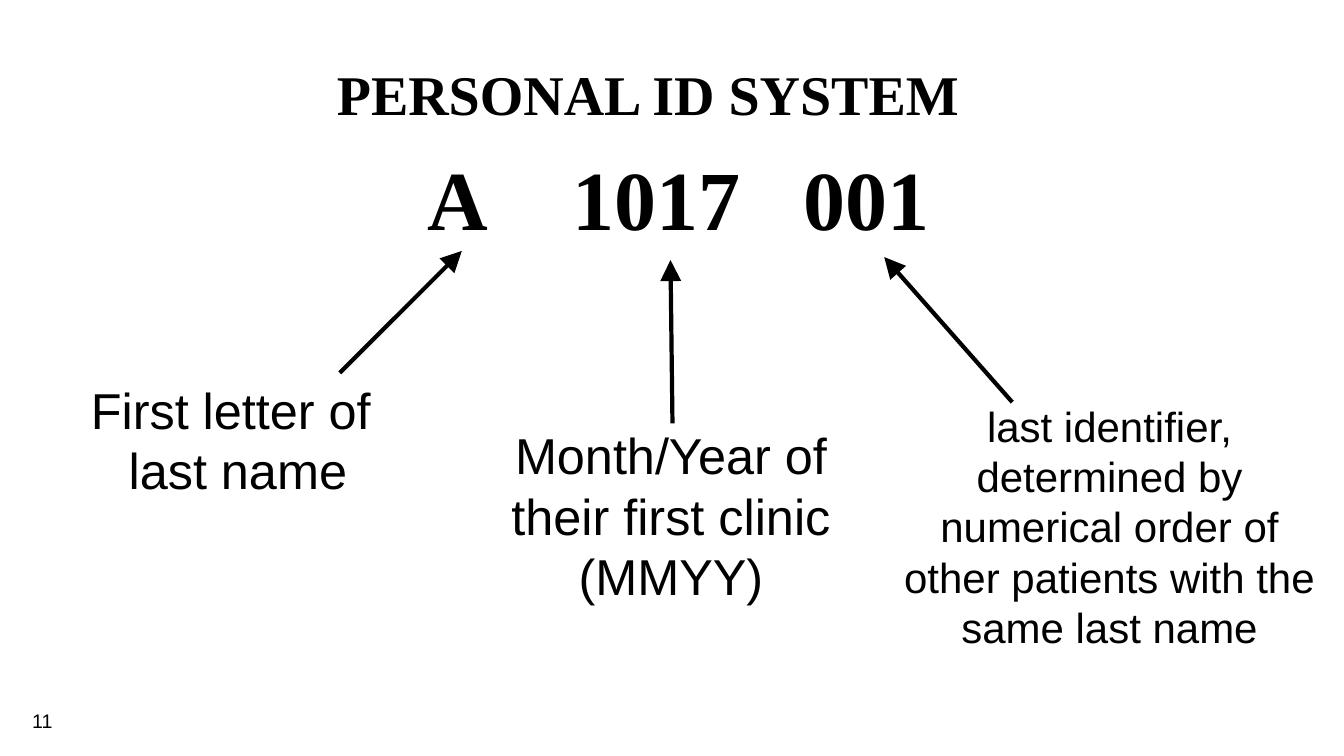
import pptx
import pptx.util
import pptx.dml.color
import pptx.enum.text
import pptx.enum.shapes
import pptx.oxml.ns
import lxml.etree
from dataclasses import dataclass

Inches = pptx.util.Inches
Pt = pptx.util.Pt
Align = pptx.enum.text.PP_ALIGN
Anchor = pptx.enum.text.MSO_ANCHOR
qn = pptx.oxml.ns.qn


@dataclass
class Theme:
    """Colours, fonts and type sizes of the slide."""
    ink: str = "000000"
    serif: str = "Times New Roman"
    sans: str = "Arial"
    title: int = 40
    code: int = 60
    label: int = 36
    small: int = 30
    page: int = 14
    line: int = 3
    lead: float = 1.2


THEME = Theme()


def ink():
    """Return the text and line colour."""
    return pptx.dml.color.RGBColor.from_string(THEME.ink)


def place(shape, box):
    """Move a shape to a box of left, top, width and height."""
    shape.left, shape.top, shape.width, shape.height = map(Inches, box)


def style(shape, size, face, bold=False, align=Align.CENTER, inset=0.1):
    """Format the frame, paragraphs and runs of a shape."""
    frame = shape.text_frame
    frame.word_wrap = True
    frame.auto_size = pptx.enum.text.MSO_AUTO_SIZE.NONE
    frame.margin_left = frame.margin_right = Inches(0.1)
    frame.margin_top = frame.margin_bottom = Inches(inset)
    for para in frame.paragraphs:
        para.alignment = align
        para.space_before = Pt(0)
        para.line_spacing = Pt(size * THEME.lead)
        for run in para.runs:
            font = run.font
            font.size, font.name, font.bold = Pt(size), face, bold
            font.color.rgb = ink()


def title(slide, box, text):
    """Fill the title placeholder."""
    shape = slide.shapes.title
    place(shape, box)
    shape.text_frame.text = text
    shape.text_frame.vertical_anchor = Anchor.MIDDLE
    style(shape, THEME.title, THEME.serif, bold=True)


def code(slide, box, parts):
    """Set the parts of the code, each with its extra gap in points."""
    shape = slide.placeholders[1]
    place(shape, box)
    frame = shape.text_frame
    frame.vertical_anchor = Anchor.TOP
    para = frame.paragraphs[0]
    props = para._p.get_or_add_pPr()
    props.set("marL", str(int(Inches(0.14))))
    props.set("indent", "0")
    lxml.etree.SubElement(props, qn("a:buNone"))
    for text, gap in parts:
        if gap:
            space = para.add_run()
            space.text = " "
            space.font._element.set("spc", str(gap * 100))
        para.add_run().text = text
    style(shape, THEME.code, THEME.serif, bold=True)


def label(slide, box, text, size, **kind):
    """Add a text box."""
    shape = slide.shapes.add_textbox(*map(Inches, box))
    shape.text_frame.text = text
    style(shape, size, THEME.sans, **kind)


def arrow(slide, start, end):
    """Draw an arrow from start to end."""
    link = slide.shapes.add_connector(
        pptx.enum.shapes.MSO_CONNECTOR.STRAIGHT, *map(Inches, start + end))
    link.line.color.rgb = ink()
    link.line.width = Pt(THEME.line)
    lxml.etree.SubElement(link.line._get_or_add_ln(), qn("a:tailEnd"),
                          type="triangle", w="lg", len="lg")
    lxml.etree.SubElement(link._element.spPr, qn("a:effectLst"))


def main():
    """Build the slide and save it."""
    deck = pptx.Presentation()
    deck.slide_width, deck.slide_height = Inches(13.33), Inches(7.5)
    slide = deck.slides.add_slide(deck.slide_layouts[1])
    title(slide, (0.33, 0.3, 12.33, 1.25), "PERSONAL ID SYSTEM ")
    code(slide, (0.22, 1.35, 12.88, 4.95),
         [("A", 0), ("1017", 45), ("001", 30)])
    label(slide, (0.22, 6.98, 0.78, 0.52), "11", THEME.page,
          align=Align.LEFT, inset=0.05)
    notes = [
        ((3.37, 3.7), (4.58, 2.49), (0.33, 3.66, 4.06, 1.47), THEME.label,
         "First letter of \nlast name"),
        ((6.67, 4.2), (6.65, 2.58), (4.53, 4.11, 4.25, 1.95), THEME.label,
         "Month/Year of their first clinic (MMYY)"),
        ((10.04, 3.99), (8.77, 2.55), (8.76, 3.87, 4.49, 2.44), THEME.small,
         "last identifier, determined by numerical order of other patients "
         "with the same last name"),
    ]
    for start, end, box, size, text in notes:
        arrow(slide, start, end)
        label(slide, box, text, size)
    deck.save("out.pptx")


if __name__ == "__main__":
    main()
